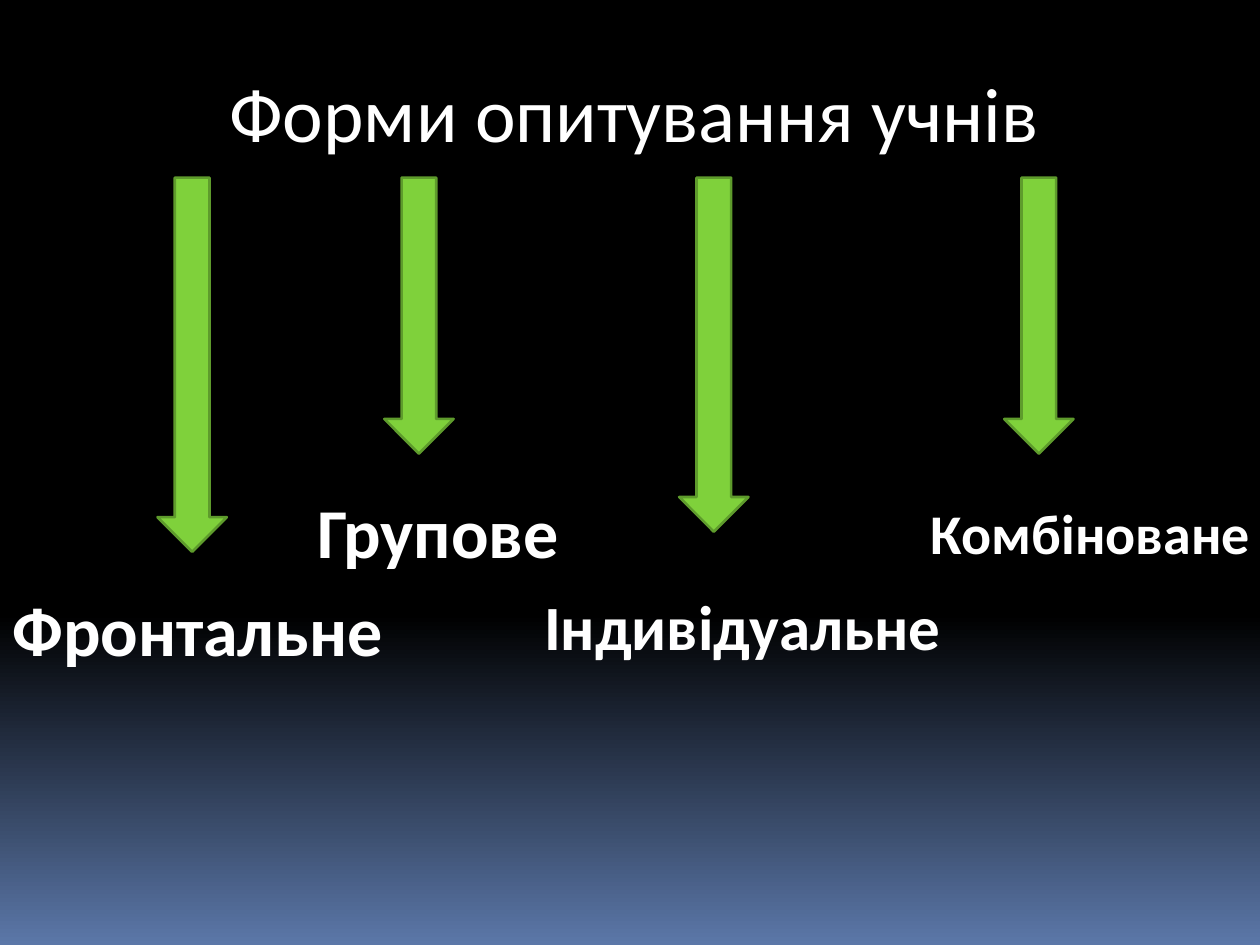
from copy import deepcopy

from pptx import Presentation
from pptx.dml.color import RGBColor
from pptx.enum.shapes import MSO_SHAPE
from pptx.enum.text import MSO_ANCHOR, MSO_AUTO_SIZE, PP_ALIGN
from pptx.oxml.ns import qn
from pptx.util import Inches, Pt

BLACK = RGBColor(0x00, 0x00, 0x00)
BLUE = RGBColor(0x5B, 0x77, 0xA8)
WHITE = RGBColor(0xFF, 0xFF, 0xFF)
GREEN = RGBColor(0x7F, 0xD1, 0x3B)
DARK_GREEN = RGBColor(0x5E, 0x9B, 0x2C)

ARROW_TOP = 1.41
ARROW_WIDTH = 0.55

# Arrow left and height; label text, box (left, top, width, height) and size
SURVEY_FORMS = [
    (1.25, 2.97, "Фронтальне", (0, 4.61, 3.28, 0.77), 40),
    (3.05, 2.19, "Групове", (2.42, 3.83, 2.22, 0.77), 40),
    (5.39, 2.81, "Індивідуальне", (4.22, 4.61, 3.42, 0.71), 36),
    (7.97, 2.19, "Комбіноване", (7.29, 3.91, 2.81, 0.64), 32),
]


def set_background(slide):
    """Black down to 65 %, then fading to blue at the bottom."""
    fill = slide.background.fill
    fill.gradient()
    fill.gradient_angle = 270
    for stop, color, position in zip(fill.gradient_stops, (BLACK, BLUE), (0, 1)):
        stop.color.rgb = color
        stop.position = position
    first_stop = slide.element.find(".//" + qn("a:gs"))
    middle_stop = deepcopy(first_stop)
    middle_stop.set("pos", "65000")
    first_stop.addnext(middle_stop)


def set_text(shape, text, *, size, bold=False, color=WHITE, font="Calibri"):
    frame = shape.text_frame
    frame.word_wrap = False
    frame.auto_size = MSO_AUTO_SIZE.SHAPE_TO_FIT_TEXT
    frame.vertical_anchor = MSO_ANCHOR.TOP
    paragraph = frame.paragraphs[0]
    paragraph.alignment = PP_ALIGN.LEFT
    run = paragraph.add_run()
    run.text = text
    run.font.name = font
    run.font.size = Pt(size)
    run.font.bold = bold
    run.font.color.rgb = color


def add_title(slide, text):
    title = slide.shapes.title
    title.left, title.top = Inches(1.72), Inches(0.47)
    title.width, title.height = Inches(6.79), Inches(0.84)
    set_text(title, text, size=44)


def add_down_arrow(slide, left, height):
    arrow = slide.shapes.add_shape(
        MSO_SHAPE.DOWN_ARROW, Inches(left), Inches(ARROW_TOP),
        Inches(ARROW_WIDTH), Inches(height))
    arrow.shadow.inherit = False
    arrow.fill.solid()
    arrow.fill.fore_color.rgb = GREEN
    arrow.line.color.rgb = DARK_GREEN
    arrow.line.width = Pt(1.5)


def add_label(slide, text, box, size):
    label = slide.shapes.add_textbox(*map(Inches, box))
    set_text(label, text, size=size, bold=True)


def main():
    presentation = Presentation()
    presentation.slide_width = Inches(10)
    presentation.slide_height = Inches(7.5)
    title_only = presentation.slide_layouts[5]
    slide = presentation.slides.add_slide(title_only)

    set_background(slide)
    add_title(slide, "Форми опитування учнів")

    # Arrows first, then the labels they point to
    for left, height, *_ in SURVEY_FORMS:
        add_down_arrow(slide, left, height)
    for *_, text, box, size in SURVEY_FORMS:
        add_label(slide, text, box, size)

    presentation.save("out.pptx")


if __name__ == "__main__":
    main()
